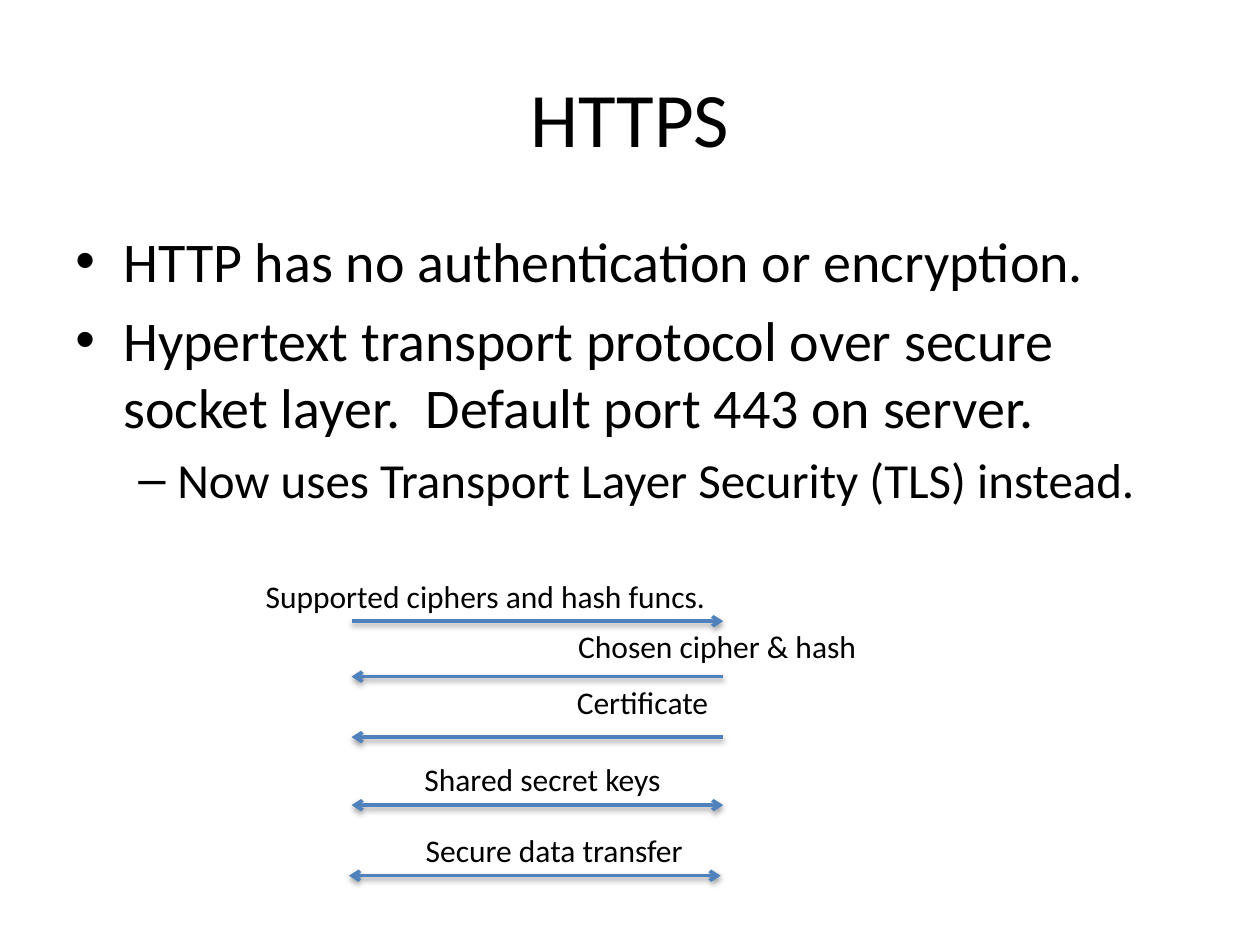
from lxml import etree
from pptx import Presentation
from pptx.dml.color import RGBColor
from pptx.enum.shapes import MSO_CONNECTOR
from pptx.enum.text import MSO_ANCHOR, PP_ALIGN
from pptx.oxml.ns import qn
from pptx.util import Emu, Inches, Pt

STRAIGHT = MSO_CONNECTOR.STRAIGHT
MIDDLE, TOP = MSO_ANCHOR.MIDDLE, MSO_ANCHOR.TOP
CENTER, LEFT = PP_ALIGN.CENTER, PP_ALIGN.LEFT

COLORS = {"text": "000000", "arrow": "4F81BD", "shadow": "000000"}
FONT = "Calibri"
TITLE = "HTTPS"
POINTS = [
    (0, "HTTP has no authentication or encryption."),
    (0, "Hypertext transport protocol over secure socket layer.  Default port 443 on server."),
    (1, "Now uses Transport Layer Security (TLS) instead."),
]
LEVELS = [
    {"size": 32, "bullet": "•", "margin": 0.38, "hanging": 0.38},
    {"size": 28, "bullet": "–", "margin": 0.81, "hanging": 0.31},
]
TO_SERVER, TO_CLIENT, BOTH = ("tailEnd",), ("headEnd",), ("headEnd", "tailEnd")
HANDSHAKE = [
    ("Supported ciphers and hash funcs.", 2.01, 4.53, 4.02, 2.79, 4.93, TO_SERVER),
    ("Chosen cipher & hash", 4.49, 4.93, 3.03, 2.79, 5.37, TO_CLIENT),
    ("Certificate", 4.48, 5.37, 1.53, 2.79, 5.85, TO_CLIENT),
    ("Shared secret keys", 3.27, 5.98, 3.12, 2.79, 6.39, BOTH),
    ("Secure data transfer", 3.28, 6.55, 3.95, 2.77, 6.95, BOTH),
]
ARROW_LENGTH, LABEL_HEIGHT = 2.95, 0.4

prs = Presentation()
prs.slide_width, prs.slide_height = Inches(10), Inches(7.5)
slide = prs.slides.add_slide(prs.slide_layouts[6])
MARGIN = prs.slide_width * 0.05
CONTENT_WIDTH = prs.slide_width * 0.9


def style(paragraph, size, align=LEFT):
    paragraph.alignment = align
    for run in paragraph.runs:
        run.font.name = FONT
        run.font.size = Pt(size)
        run.font.color.rgb = RGBColor.from_string(COLORS["text"])


def add_frame(left, top, width, height, anchor=TOP):
    frame = slide.shapes.add_textbox(Emu(int(left)), top, Emu(int(width)), height).text_frame
    frame.word_wrap = True
    frame.vertical_anchor = anchor
    return frame


def add_bullet(paragraph, level):
    props = paragraph._p.get_or_add_pPr()
    props.set("marL", str(Inches(level["margin"])))
    props.set("indent", str(-Inches(level["hanging"])))
    etree.SubElement(props, qn("a:buFont"), typeface="Arial")
    etree.SubElement(props, qn("a:buChar"), char=level["bullet"])


def add_arrow(left, y, ends):
    arrow = slide.shapes.add_connector(
        STRAIGHT, Inches(left), Inches(y), Inches(left + ARROW_LENGTH), Inches(y))
    arrow.line.color.rgb = RGBColor.from_string(COLORS["arrow"])
    arrow.line.width = Pt(2)
    for end in ends:
        etree.SubElement(arrow.line._get_or_add_ln(), qn(f"a:{end}"), type="arrow")
    effects = etree.SubElement(arrow._element.spPr, qn("a:effectLst"))
    shadow = etree.SubElement(
        effects, qn("a:outerShdw"), blurRad=str(Pt(3.1)), dist=str(Pt(1.6)),
        dir="5400000", rotWithShape="0")
    tint = etree.SubElement(shadow, qn("a:srgbClr"), val=COLORS["shadow"])
    etree.SubElement(tint, qn("a:alpha"), val="38000")


title = add_frame(MARGIN, Inches(0.3), CONTENT_WIDTH, Inches(1.25), MIDDLE)
title.text = TITLE
style(title.paragraphs[0], 44, CENTER)

body = add_frame(MARGIN, Inches(1.75), CONTENT_WIDTH, Inches(4.95))
body.text = "\n".join(text for _, text in POINTS)
for paragraph, (depth, _) in zip(body.paragraphs, POINTS):
    level = LEVELS[depth]
    paragraph.level = depth
    paragraph.space_before = Pt(level["size"] * 0.2)
    style(paragraph, level["size"])
    add_bullet(paragraph, level)

for message, left, top, width, arrow_left, arrow_y, ends in HANDSHAKE:
    add_arrow(arrow_left, arrow_y, ends)
    label = add_frame(Inches(left), Inches(top), Inches(width), Inches(LABEL_HEIGHT))
    label.text = message
    style(label.paragraphs[0], 18)

prs.save("out.pptx")
